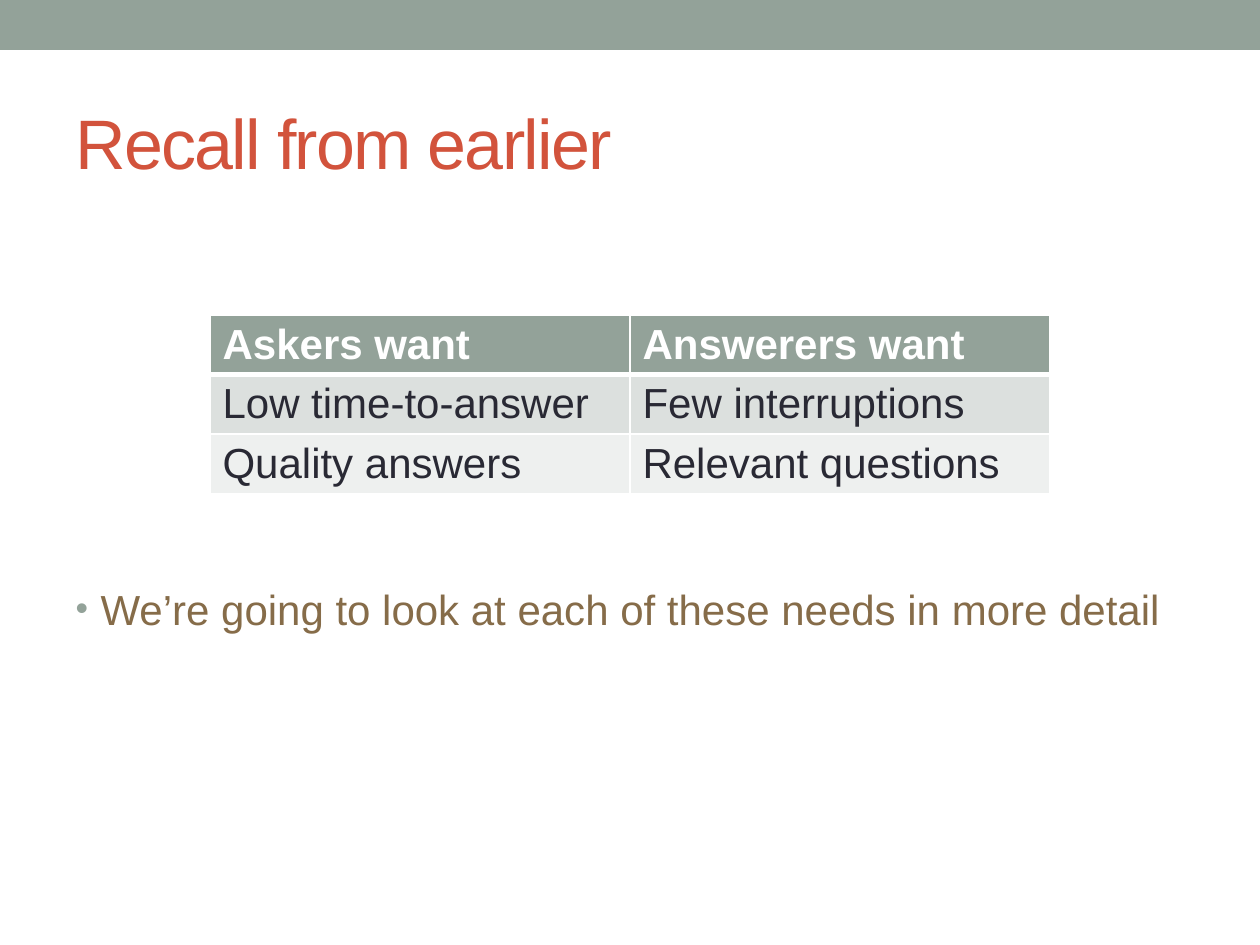
from dataclasses import dataclass

from lxml import etree
from pptx import Presentation
from pptx.dml.color import RGBColor
from pptx.enum.shapes import MSO_SHAPE
from pptx.enum.text import MSO_ANCHOR, MSO_AUTO_SIZE, PP_ALIGN
from pptx.oxml.ns import qn
from pptx.util import Emu, Pt

RECT = MSO_SHAPE.RECTANGLE
LEFT = PP_ALIGN.LEFT
TOP = MSO_ANCHOR.TOP
MIDDLE = MSO_ANCHOR.MIDDLE
NO_FIT = MSO_AUTO_SIZE.NONE
SCALE = 914400 / 126


@dataclass(frozen=True)
class Theme:
    font: str = "Arial"
    sage: str = "93A299"
    red: str = "D2533C"
    brown: str = "866C49"
    ink: str = "292934"
    white: str = "FFFFFF"
    bands: tuple = ("DCE0DE", "EEF0EF")
    big: int = 40
    text: int = 24


THEME = Theme()


def px(count):
    return Emu(round(count * SCALE))


def paint(fill, color):
    fill.solid()
    fill.fore_color.rgb = RGBColor.from_string(color)


def add_run(para, text, size, color, bold=False):
    run = para.add_run()
    run.text = text
    font = run.font
    font.name, font.size, font.bold = THEME.font, Pt(size), bold
    font.color.rgb = RGBColor.from_string(color)
    return run


def add_bar(slide, *box):
    bar = slide.shapes.add_shape(RECT, *map(px, box))
    bar.shadow.inherit = False
    paint(bar.fill, THEME.sage)
    bar.line.fill.background()


def place(holder, box, anchor):
    holder.left, holder.top, holder.width, holder.height = map(px, box)
    frame = holder.text_frame
    frame.word_wrap = True
    frame.auto_size = NO_FIT
    frame.vertical_anchor = anchor
    para = frame.paragraphs[0]
    para.alignment = LEFT
    para.space_before = Pt(0)
    return para


def set_title(slide, text, *box):
    para = place(slide.shapes.title, box, MIDDLE)
    run = add_run(para, text, THEME.big, THEME.red)
    run.font._element.set("spc", "-100")


def add_bullet(para, indent):
    props = para._p.get_or_add_pPr()
    props.set("marL", str(px(indent)))
    props.set("indent", str(-px(indent)))
    tint = etree.SubElement(props, qn("a:buClr"))
    etree.SubElement(tint, qn("a:srgbClr"), val=THEME.sage)
    etree.SubElement(props, qn("a:buSzPct"), val="85000")
    etree.SubElement(props, qn("a:buFont"), typeface=THEME.font)
    etree.SubElement(props, qn("a:buChar"), char="•")


def set_body(slide, text, *box):
    para = place(slide.placeholders[1], box, TOP)
    add_bullet(para, 25)
    add_run(para, text, THEME.text, THEME.brown)


def add_edge(cell, side, width):
    props = cell._tc.get_or_add_tcPr()
    line = etree.SubElement(props, qn(f"a:ln{side}"), w=str(Pt(width)))
    fill = etree.SubElement(line, qn("a:solidFill"))
    etree.SubElement(fill, qn("a:srgbClr"), val=THEME.white)


def add_table(slide, rows, *box):
    shape = slide.shapes.add_table(len(rows), len(rows[0]), *map(px, box))
    table = shape.table
    for r, row in enumerate(rows):
        head = r == 0
        back = THEME.sage if head else THEME.bands[(r - 1) % 2]
        color = THEME.white if head else THEME.ink
        edges = {"L": 1, "R": 1, "T": 3 if r == 1 else 1, "B": 3 if head else 1}
        for c, text in enumerate(row):
            cell = table.cell(r, c)
            for side, width in edges.items():
                add_edge(cell, side, width)
            paint(cell.fill, back)
            para = cell.text_frame.paragraphs[0]
            add_run(para, text, THEME.text, color, head)


def main():
    deck = Presentation()
    deck.slide_width, deck.slide_height = px(1260), px(945)
    slide = deck.slides.add_slide(deck.slide_layouts[1])
    paint(slide.background.fill, THEME.white)
    add_bar(slide, 0, 0, 1260, 50)
    set_title(slide, "Recall from earlier", 63, 73, 1134, 136)
    set_body(
        slide,
        "We’re going to look at each of these needs in more detail",
        63, 577, 1134, 315,
    )
    rows = [
        ("Askers want", "Answerers want"),
        ("Low time-to-answer", "Few interruptions"),
        ("Quality answers", "Relevant questions"),
    ]
    add_table(slide, rows, 210, 315, 840, 177)
    deck.save("out.pptx")


if __name__ == "__main__":
    main()
